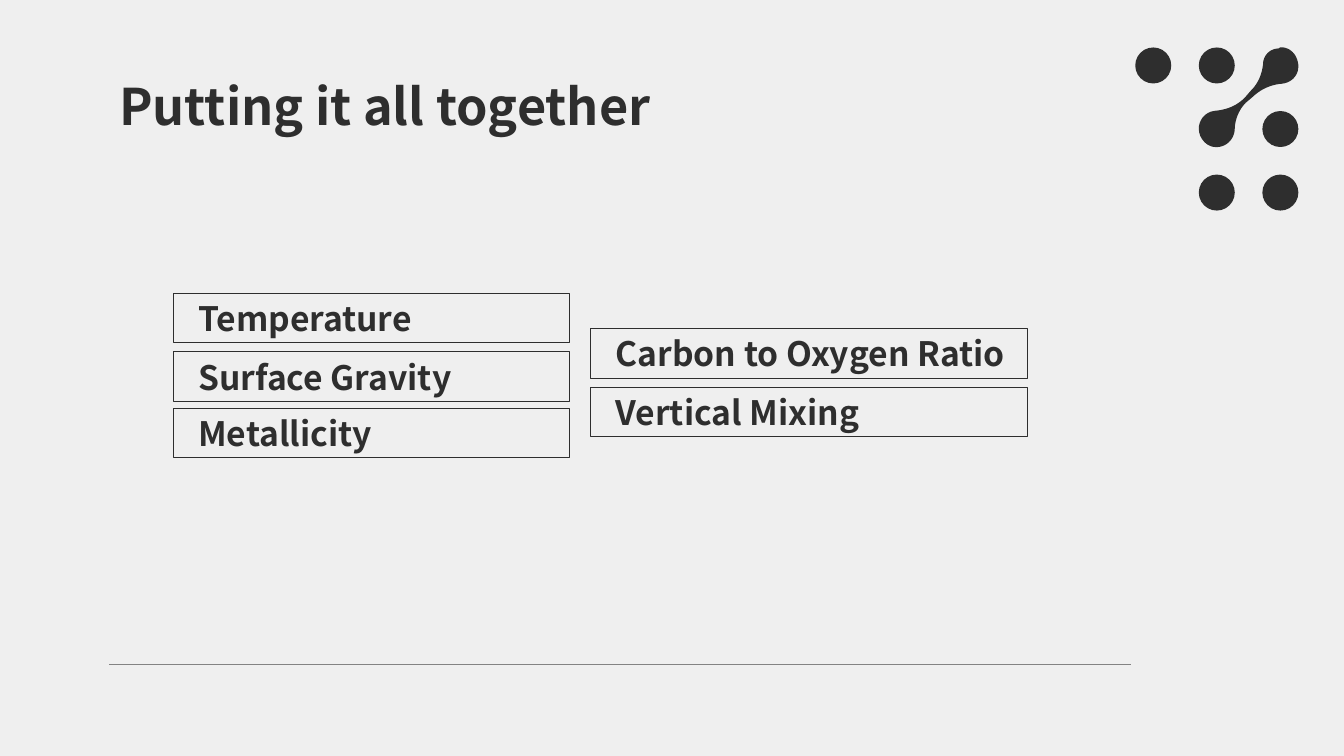
from math import comb

from lxml.etree import SubElement
from pptx import Presentation
from pptx.dml.color import RGBColor
from pptx.enum.shapes import MSO_CONNECTOR, MSO_SHAPE
from pptx.enum.text import MSO_ANCHOR, MSO_AUTO_SIZE, PP_ALIGN
from pptx.oxml.ns import qn
from pptx.util import Pt

FONT = "Noto Sans CJK JP"
INK = "2E2E2E"
PAPER = "EFEFEF"
RULE = "838383"

PARAMETER_BOXES = [
    ("Temperature", 123.8, 209.5, 283),
    ("Surface Gravity", 123.8, 251.3, 283),
    ("Metallicity", 123.8, 291.6, 283),
    ("Carbon to Oxygen Ratio", 421.9, 234.7, 311.8),
    ("Vertical Mixing", 421.9, 276.5, 311.8),
]
BOX_HEIGHT = 35.5

DOT_CELLS = [(0, 0), (1, 0), (2, 1), (1, 2), (2, 2)]
DOT_LEFT, DOT_TOP, DOT_PITCH, DOT_SIZE = 810.9, 33.9, 45.4, 25.7

LINK_START = (915.1, 33.8)
LINK_CURVES = [
    [(914.4, 33.8), (914.4, 33.8), (913.7, 34.6)],
    [(907.2, 34.6), (902.2, 39.6), (902.2, 46.1)],
    [(901.4, 53.3), (898.6, 59.8), (893.5, 64.8)],
    [(889.2, 69.8)],
    [(883.4, 75.6), (876.2, 78.5), (867.6, 79.2)],
    [(856.8, 80.6), (852.5, 93.6), (860.4, 101.5)],
    [(862.6, 103.7), (865.4, 105.1), (869, 105.1)],
    [(875.5, 105.1), (881.3, 100.1), (882, 92.9)],
    [(882, 85.7), (884.9, 78.5), (889.9, 73.4)],
    [(894.2, 69.8)],
    [(900, 64.1), (907.2, 60.5), (915.8, 59.8)],
    [(923, 59), (928.1, 53.3), (927.4, 46.1)],
    [(926.6, 38.9), (921.6, 33.8), LINK_START],
]
CURVE_STEPS = 12


def color(hex_string):
    return RGBColor.from_string(hex_string)


def write_text(shape, text, size):
    frame = shape.text_frame
    frame.word_wrap = True
    frame.auto_size = MSO_AUTO_SIZE.NONE
    frame.vertical_anchor = MSO_ANCHOR.MIDDLE
    frame.margin_left = frame.margin_right = Pt(7.2)
    frame.margin_top = frame.margin_bottom = Pt(7.2)
    paragraph = frame.paragraphs[0]
    paragraph.alignment = PP_ALIGN.LEFT
    run = paragraph.add_run()
    run.text = text
    run.font.name = FONT
    run.font.size = Pt(size)
    run.font.bold = True
    run.font.color.rgb = color(INK)
    return paragraph


def fill_plain(shape):
    shape.shadow.inherit = False
    shape.fill.solid()
    shape.fill.fore_color.rgb = color(INK)
    shape.line.fill.background()


def set_title(slide, text):
    title = slide.shapes.title
    title.left, title.top = Pt(77.8), Pt(55.4)
    title.width, title.height = Pt(593.3), Pt(40.3)
    write_text(title, text, 36)


def add_parameter_box(slide, text, left, top, width):
    box = slide.shapes.add_shape(
        MSO_SHAPE.RECTANGLE, Pt(left), Pt(top), Pt(width), Pt(BOX_HEIGHT))
    box.shadow.inherit = False
    box.fill.background()
    box.line.color.rgb = color(INK)
    box.line.width = Pt(0.75)
    properties = write_text(box, text, 24)._p.get_or_add_pPr()
    properties.set("marL", str(Pt(36)))
    properties.set("indent", str(Pt(-25.2)))


def add_dot(slide, column, row):
    dot = slide.shapes.add_shape(
        MSO_SHAPE.OVAL,
        Pt(DOT_LEFT + column * DOT_PITCH), Pt(DOT_TOP + row * DOT_PITCH),
        Pt(DOT_SIZE), Pt(DOT_SIZE))
    fill_plain(dot)


def curve_point(controls, t):
    """Return the Bezier point at t for any number of control points."""
    degree = len(controls) - 1
    weights = [comb(degree, i) * t**i * (1 - t)**(degree - i)
               for i in range(degree + 1)]
    return tuple(Pt(sum(weight * point[axis]
                        for weight, point in zip(weights, controls)))
                 for axis in (0, 1))


def add_dot_link(slide):
    points = []
    start = LINK_START
    for curve in LINK_CURVES:
        steps = CURVE_STEPS if len(curve) > 1 else 1
        points += [curve_point([start, *curve], step / steps)
                   for step in range(1, steps + 1)]
        start = curve[-1]
    builder = slide.shapes.build_freeform(*(Pt(value) for value in LINK_START))
    builder.add_line_segments(points, close=True)
    fill_plain(builder.convert_to_shape())


def add_footer_rule(slide):
    rule = slide.shapes.add_connector(
        MSO_CONNECTOR.STRAIGHT, Pt(807.8), Pt(474.5), Pt(77.8), Pt(474.5))
    rule.line.color.rgb = color(RULE)
    rule.line.width = Pt(0.75)
    SubElement(rule._element.spPr, qn("a:effectLst"))


def main():
    presentation = Presentation()
    presentation.slide_width, presentation.slide_height = Pt(960), Pt(540)
    slide = presentation.slides.add_slide(presentation.slide_layouts[5])
    slide.background.fill.solid()
    slide.background.fill.fore_color.rgb = color(PAPER)

    add_footer_rule(slide)
    for column, row in DOT_CELLS:
        add_dot(slide, column, row)
    add_dot_link(slide)
    for box in PARAMETER_BOXES:
        add_parameter_box(slide, *box)
    set_title(slide, "Putting it all together")
    presentation.save("out.pptx")


if __name__ == "__main__":
    main()
